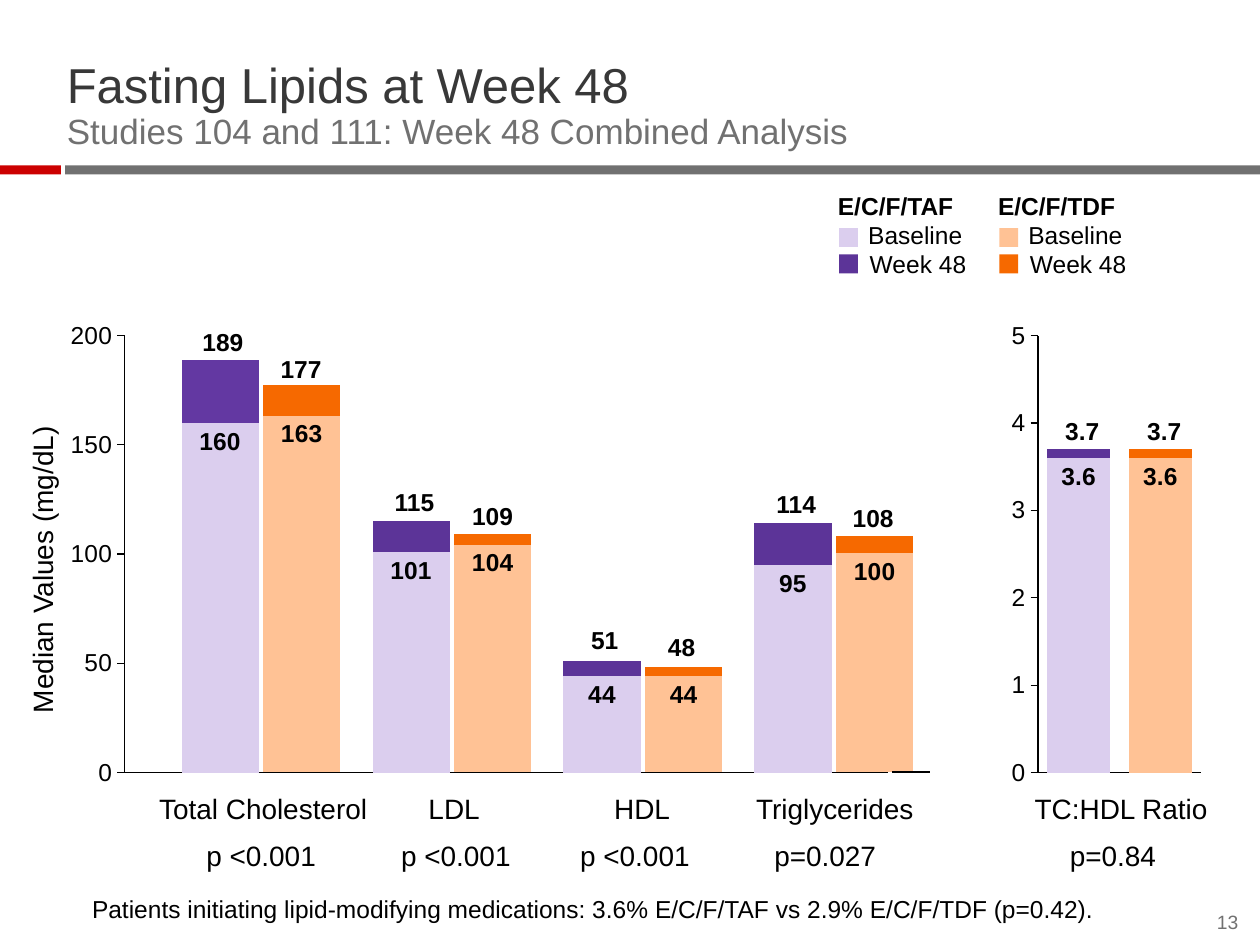
from lxml import etree
from pptx import Presentation
from pptx.chart.data import CategoryChartData
from pptx.dml.color import RGBColor
from pptx.enum import chart as charts, shapes, text
from pptx.oxml import ns
from pptx.util import Pt

BLACK = RGBColor(0x00, 0x00, 0x00)
DARK = RGBColor(0x38, 0x38, 0x38)
GREY = RGBColor(0x71, 0x71, 0x71)
RED = RGBColor(0xCC, 0x00, 0x00)
LILAC = RGBColor(0xDB, 0xCE, 0xEE)
PURPLE = RGBColor(0x5C, 0x34, 0x98)
BRIGHT_PURPLE = RGBColor(0x63, 0x38, 0xA2)
PEACH = RGBColor(0xFF, 0xC2, 0x95)
ORANGE = RGBColor(0xF6, 0x69, 0x00)
FONT = "Arial"

deck = Presentation()
deck.slide_width, deck.slide_height = Pt(720), Pt(540)
page = deck.slides.add_slide(deck.slide_layouts[6])


def add_text(content, left, top, width, height, size=14, color=BLACK, bold=False,
             align=text.PP_ALIGN.LEFT, anchor=text.MSO_ANCHOR.TOP, inset_top=0,
             spacing=0.9, rotation=0):
    """Add a text box with one formatted span and return its paragraph."""
    box = page.shapes.add_textbox(Pt(left), Pt(top), Pt(width), Pt(height))
    box.rotation = rotation
    frame = box.text_frame
    frame.word_wrap = True
    frame.margin_left = frame.margin_right = frame.margin_bottom = 0
    frame.margin_top = Pt(inset_top)
    frame.vertical_anchor = anchor
    para = frame.paragraphs[0]
    para.alignment, para.line_spacing = align, spacing
    span = para.add_run()
    span.text = content
    span.font.name, span.font.size, span.font.bold = FONT, Pt(size), bold
    span.font.color.rgb = color
    return para


def add_stacked_chart(left, width, baseline, change, colors, maximum, step, gap, plot_box,
                      axes=True):
    """Stack the change at week 48 on the baseline; colors holds one list per series."""
    data = CategoryChartData()
    data.categories = [str(number + 1) for number in range(len(baseline))]
    data.add_series("Series 1", baseline)
    data.add_series("Series 2", change)
    chart = page.shapes.add_chart(charts.XL_CHART_TYPE.COLUMN_STACKED, Pt(left), Pt(182.16),
                                  Pt(width), Pt(302.4), data).chart
    chart.has_legend = chart.has_title = False
    chart.font.name, chart.font.size, chart.font.color.rgb = FONT, Pt(14), BLACK

    plot = chart.plots[0]
    plot.gap_width, plot.overlap, plot.vary_by_categories = gap, 100, False
    for series, fills in zip(plot.series, colors):
        series.format.fill.solid()
        series.format.fill.fore_color.rgb = fills[-1]
        for index, color in enumerate(fills[:-1]):
            point_fill = series.points[index].format.fill
            point_fill.solid()
            point_fill.fore_color.rgb = color
    labels = plot.series[0].data_labels
    labels.show_value = True
    labels.position = charts.XL_LABEL_POSITION.INSIDE_END
    labels.font.name, labels.font.size, labels.font.bold = FONT, Pt(14), True
    labels.font.color.rgb = BLACK

    values, categories = chart.value_axis, chart.category_axis
    values.minimum_scale, values.maximum_scale, values.major_unit = 0, maximum, step
    values.has_major_gridlines = False
    values.visible = axes
    values.major_tick_mark = charts.XL_TICK_MARK.OUTSIDE
    categories.major_tick_mark = charts.XL_TICK_MARK.NONE
    categories.tick_label_position = charts.XL_TICK_LABEL_POSITION.NONE
    for axis in (values, categories):
        if axes:
            axis.format.line.color.rgb, axis.format.line.width = BLACK, Pt(0.75)
        else:
            axis.format.line.fill.background()

    # Fixed inner plot area and clear backgrounds, so that two charts can overlap
    chart_space = chart.element
    area = chart_space.find(".//" + ns.qn("c:plotArea"))
    for old in area.findall(ns.qn("c:layout")):
        area.remove(old)
    layout = etree.Element(ns.qn("c:layout"))
    manual = etree.SubElement(layout, ns.qn("c:manualLayout"))
    settings = [("layoutTarget", "inner"), ("xMode", "edge"), ("yMode", "edge")]
    for tag, value in settings + list(zip("xywh", plot_box)):
        etree.SubElement(manual, ns.qn("c:" + tag)).set("val", str(value))
    area.insert(0, layout)
    for place in (area[-1], chart_space.find(ns.qn("c:chart"))):
        clear = etree.Element(ns.qn("c:spPr"))
        etree.SubElement(clear, ns.qn("a:noFill"))
        etree.SubElement(etree.SubElement(clear, ns.qn("a:ln")), ns.qn("a:noFill"))
        place.addnext(clear)


# Header bar and legend keys
for left, top, width, height, color in [
    (37.3, 94.5, 682.7, 5.2, GREY), (0, 94.5, 34.8, 5.2, RED),
    (479.5, 130.3, 10.8, 10.8, LILAC), (479.5, 145.4, 10.8, 10.8, PURPLE),
    (571, 130.3, 10.8, 10.8, PEACH), (571, 145.4, 10.8, 10.8, ORANGE),
]:
    block = page.shapes.add_shape(shapes.MSO_SHAPE.RECTANGLE, Pt(left), Pt(top),
                                  Pt(width), Pt(height))
    block.shadow.inherit = False
    block.fill.solid()
    block.fill.fore_color.rgb = color
    block.line.fill.background()

# Title, slide number and footnote
title = add_text("Fasting Lipids at Week 48", 38.2, 33.8, 648, 53.3, size=28, color=DARK,
                 anchor=text.MSO_ANCHOR.BOTTOM)
title.add_line_break()
subtitle = title.add_run()
subtitle.text = "Studies 104 and 111: Week 48 Combined Analysis"
subtitle.font.name, subtitle.font.size, subtitle.font.color.rgb = FONT, Pt(20), GREY
add_text("13", 688.3, 520.5, 19.4, 13, size=11, color=GREY, align=text.PP_ALIGN.RIGHT,
         anchor=text.MSO_ANCHOR.BOTTOM, spacing=1.0)
add_text("Patients initiating lipid-modifying medications: "
         "3.6% E/C/F/TAF vs 2.9% E/C/F/TDF (p=0.42).", 52.6, 512.6, 607, 18)

# Charts
add_stacked_chart(107.3, 482.4, [163, 104, 44, 100], [14, 5, 4, 8], [[PEACH], [ORANGE]],
                  200, 50, 148, (0.022, 0.03, 0.905, 0.827), axes=False)
add_stacked_chart(36, 482.4, [160, 101, 44, 95], [29, 14, 7, 19],
                  [[LILAC], [BRIGHT_PURPLE, PURPLE]],
                  200, 50, 148, (0.073, 0.032, 0.905, 0.826))
add_stacked_chart(574.6, 138.2, [3.6, 3.6], [0.1, 0.1], [[LILAC, PEACH], [PURPLE, ORANGE]],
                  5, 1, 30, (0.134, 0.032, 0.676, 0.826))
axis_end = page.shapes.add_connector(shapes.MSO_CONNECTOR.STRAIGHT, Pt(509.8), Pt(441.2),
                                     Pt(531.4), Pt(441.2))
axis_end.line.color.rgb, axis_end.line.width = BLACK, Pt(0.75)
etree.SubElement(axis_end.element.spPr, ns.qn("a:effectLst"))

# Axis title, category names and p values
add_text("Median Values (mg/dL)", -57.6, 316.1, 165.6, 17.3, size=16, rotation=270)
for name, name_center, p_value, p_center in [
    ("Total Cholesterol", 150.4, "p <0.001", 149.2),
    ("LDL", 259.5, "p <0.001", 260.5),
    ("HDL", 366.9, "p <0.001", 362.8),
    ("Triglycerides", 477, "p=0.027", 471.5),
    ("TC:HDL Ratio", 640.6, "p=0.84", 636),
]:
    for content, center, top in [(name, name_center, 454.3), (p_value, p_center, 481.6)]:
        add_text(content, center - 70, top, 140, 17.3, size=16, align=text.PP_ALIGN.CENTER)

# Week 48 totals above the bars
for total, left, top in [
    ("189", 105.8, 185), ("177", 150.5, 200.2), ("115", 215.3, 276.5), ("109", 259.9, 284.4),
    ("51", 324, 355), ("48", 367.9, 359.3), ("114", 433.4, 277.2), ("108", 477.4, 285.1),
    ("3.7", 596.9, 235.4), ("3.7", 643.7, 235.4),
]:
    add_text(total, left, top, 43.2, 21.6, bold=True, align=text.PP_ALIGN.CENTER, inset_top=4)

# Legend text
for arm, left in [("E/C/F/TAF", 478.8), ("E/C/F/TDF", 570.3)]:
    for content, indent, top in [(arm, 0, 108), ("Baseline", 17.3, 124.6),
                                 ("Week 48", 18.2, 141.1)]:
        add_text(content, left + indent, top, 90, 21.6, bold=content == arm,
                 anchor=text.MSO_ANCHOR.MIDDLE)

deck.save("out.pptx")
